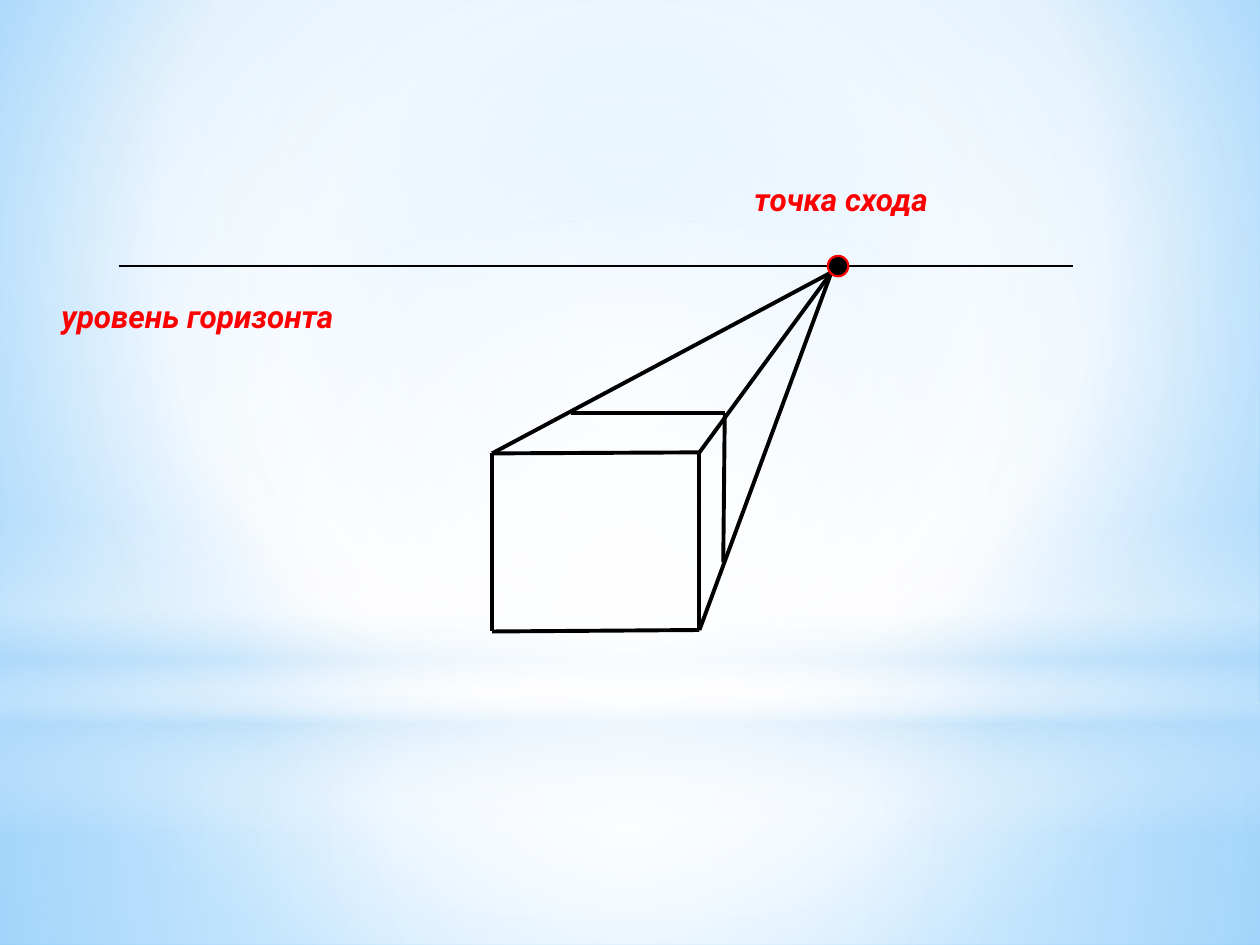
from lxml.etree import SubElement
from pptx import Presentation
from pptx.dml.color import RGBColor
from pptx.enum.shapes import MSO_CONNECTOR, MSO_SHAPE
from pptx.enum.text import MSO_AUTO_SIZE
from pptx.oxml.ns import qn
from pptx.util import Cm, Pt

BLACK = RGBColor(0x00, 0x00, 0x00)
RED = RGBColor(0xFF, 0x00, 0x00)
WHITE = RGBColor(0xFF, 0xFF, 0xFF)
PALE_BLUE = RGBColor(0xB4, 0xDC, 0xFA)
SKY_BLUE = RGBColor(0x9E, 0xD5, 0xFF)
DEEP_BLUE = RGBColor(0x5B, 0xB9, 0xFF)
CENTRE = (50, 50, 50, 50)


def set_gradient(fill, element, stops, focus=None):
    """Stops are (position, colour, opacity) in percent; without a focus
    rectangle (left, top, right, bottom) the gradient runs downwards."""
    fill.gradient()
    grad = element.find(".//" + qn("a:gradFill"))
    for child in list(grad):
        grad.remove(child)
    gs_list = SubElement(grad, qn("a:gsLst"))
    for position, color, opacity in stops:
        gs = SubElement(gs_list, qn("a:gs"), pos=str(position * 1000))
        clr = SubElement(gs, qn("a:srgbClr"), val=str(color))
        SubElement(clr, qn("a:alpha"), val=str(opacity * 1000))
    if focus:
        route = SubElement(grad, qn("a:path"), path="circle")
        sides = {side: str(v * 1000) for side, v in zip("ltrb", focus)}
        SubElement(route, qn("a:fillToRect"), **sides)
    else:
        SubElement(grad, qn("a:lin"), ang="5400000", scaled="0")


def add_line(start, end, width):
    line = slide.shapes.add_connector(
        MSO_CONNECTOR.STRAIGHT, *[Cm(v) for v in (*start, *end)])
    line.line.color.rgb = BLACK
    line.line.width = Pt(width)
    SubElement(line._element.spPr, qn("a:effectLst"))


prs = Presentation()
prs.slide_width = Cm(25.4)
prs.slide_height = Cm(19.05)
slide = prs.slides.add_slide(prs.slide_layouts[6])

# Background with soft light bands
set_gradient(slide.background.fill, slide._element,
             [(0, SKY_BLUE, 100), (60, WHITE, 100), (100, DEEP_BLUE, 100)],
             (20, 10, 20, 60))
bands = [
    (MSO_SHAPE.RECTANGLE, 14.17, 4.88, CENTRE,
     [(0, WHITE, 91), (37, WHITE, 76), (100, PALE_BLUE, 79)]),
    (MSO_SHAPE.RECTANGLE, 0, 14.17, CENTRE,
     [(0, WHITE, 89), (48, WHITE, 62), (100, PALE_BLUE, 79)]),
    (MSO_SHAPE.RECTANGLE, 10.46, 6.35, None,
     [(0, WHITE, 0), (29, WHITE, 30), (45, PALE_BLUE, 40),
      (55, WHITE, 26), (65, PALE_BLUE, 60), (100, WHITE, 0)]),
    (MSO_SHAPE.OVAL, 4.45, 14.17, CENTRE,
     [(0, WHITE, 100), (56, WHITE, 0)]),
]
for kind, top, height, focus, stops in bands:
    sp = slide.shapes.add_shape(kind, 0, Cm(top), prs.slide_width, Cm(height))
    sp.shadow.inherit = False
    sp.line.fill.background()
    set_gradient(sp.fill, sp._element, stops, focus)

# Horizon, cube and the rays to the vanishing point
add_line((2.39, 5.36), (21.64, 5.36), 0.75)
vanishing = (16.76, 5.49)
top_left, top_right = (9.92, 9.14), (14.1, 9.12)
bottom_left, bottom_right = (9.92, 12.73), (14.1, 12.7)
back_left, back_right, back_bottom = (11.51, 8.33), (14.61, 8.33), (14.58, 11.33)
edges = [
    (top_left, bottom_left), (bottom_right, bottom_left),
    (top_right, bottom_right), (top_right, top_left),
    (vanishing, top_left), (vanishing, top_right), (vanishing, bottom_right),
    (back_right, back_bottom), (back_right, back_left),
]
for start, end in edges:
    add_line(start, end, 2.25)

dot = slide.shapes.add_shape(
    MSO_SHAPE.OVAL, Cm(16.69), Cm(5.16), Cm(0.41), Cm(0.41))
dot.shadow.inherit = False
dot.fill.solid()
dot.fill.fore_color.rgb = BLACK
dot.line.color.rgb = RED
dot.line.width = Pt(1.25)

# Labels
labels = [("точка схода", 14.96, 3.51, 4.5),
          ("уровень горизонта", 0.99, 5.87, 6.86)]
for text, left, top, width in labels:
    box = slide.shapes.add_textbox(Cm(left), Cm(top), Cm(width), Cm(1.02))
    tf = box.text_frame
    tf.text = text
    tf.word_wrap = False
    tf.auto_size = MSO_AUTO_SIZE.SHAPE_TO_FIT_TEXT
    font = tf.paragraphs[0].runs[0].font
    font.name = "Roboto"
    font.size = Pt(18)
    font.bold = font.italic = True
    font.color.rgb = RED

prs.save("out.pptx")
